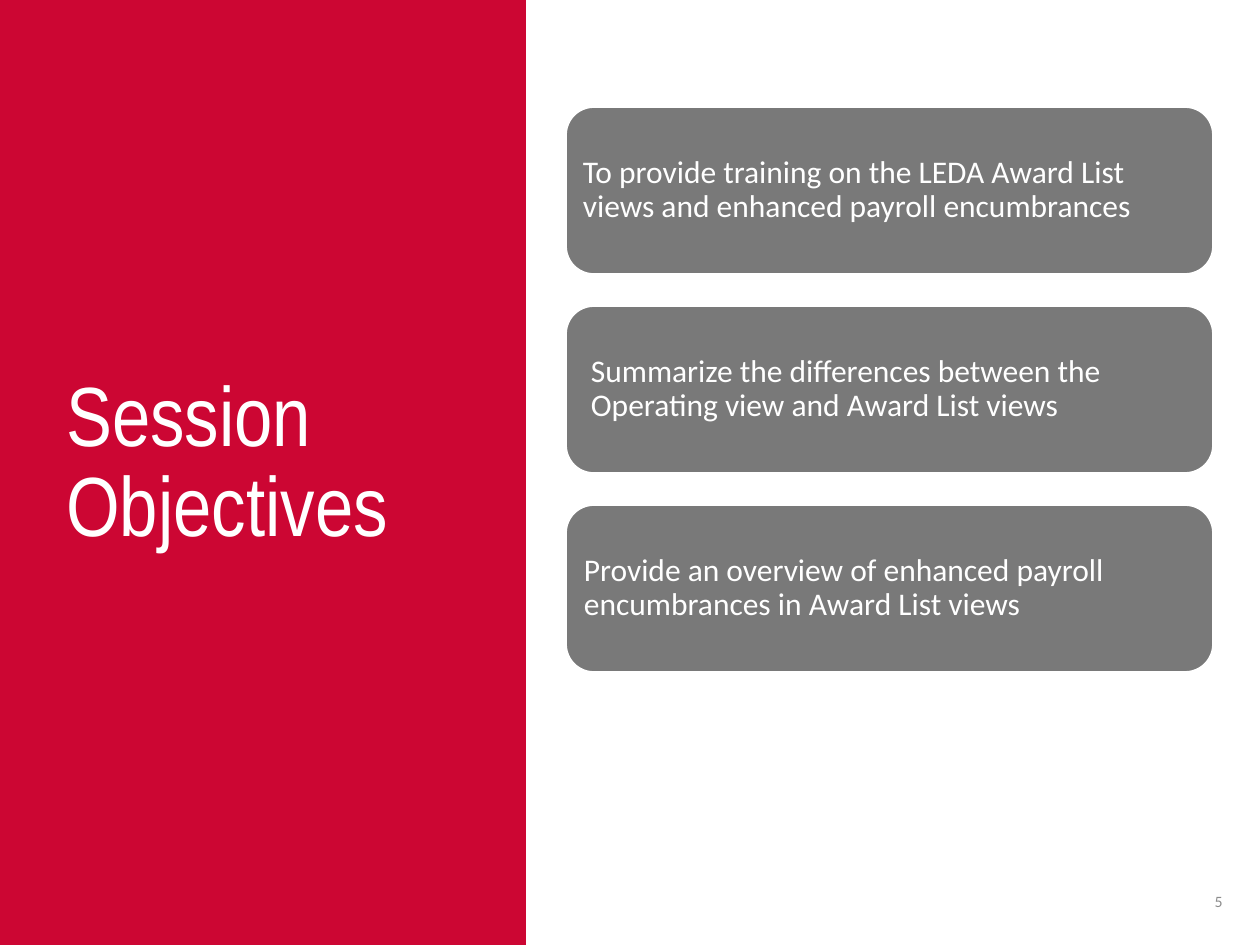
from pptx import Presentation
from pptx.dml.color import RGBColor
from pptx.enum.shapes import MSO_SHAPE
from pptx.enum.text import MSO_ANCHOR, PP_ALIGN
from pptx.util import Pt

RECT = MSO_SHAPE.RECTANGLE
ROUND = MSO_SHAPE.ROUNDED_RECTANGLE
MIDDLE = MSO_ANCHOR.MIDDLE
LEFT = PP_ALIGN.LEFT
RIGHT = PP_ALIGN.RIGHT
RED = RGBColor(0xCC, 0x06, 0x33)
GRAY = RGBColor(0x79, 0x79, 0x79)
PALE = RGBColor(0x8C, 0x8C, 0x8C)
WHITE = RGBColor(0xFF, 0xFF, 0xFF)
SCALE = 914400 / 126


def px(*vals):
    return [round(v * SCALE) for v in vals]


def add_text(box, text, size, font, color, align=LEFT, lead=0.9, pad=None):
    label = slide.shapes.add_textbox(*px(*box))
    frame = label.text_frame
    frame.word_wrap = True
    frame.vertical_anchor = MIDDLE
    if pad:
        inset = px(pad)[0]
        frame.margin_left = frame.margin_right = inset
        frame.margin_top = frame.margin_bottom = inset
    para = frame.paragraphs[0]
    para.text = text
    para.alignment = align
    para.line_spacing = lead
    para.font.size = Pt(size)
    para.font.name = font
    para.font.color.rgb = color


deck = Presentation()
deck.slide_width, deck.slide_height = px(1260, 945)
slide = deck.slides.add_slide(deck.slide_layouts[6])

panel = slide.shapes.add_shape(RECT, *px(0, 0, 526, 945))
panel.shadow.inherit = False
panel.fill.solid()
panel.fill.fore_color.rgb = RED
panel.line.fill.background()

add_text((54, 85, 393, 759), "Session Objectives", 48, "Arial Narrow", WHITE)

goals = [
    (566, 574, "To provide training on the LEDA Award List views and enhanced payroll encumbrances"),
    (566, 582, "Summarize the differences between the Operating view and Award List views"),
    (566, 575, "Provide an overview of enhanced payroll encumbrances in Award List views"),
]
for row, (left, inner, goal) in enumerate(goals):
    top = 107 + 199 * row
    card = slide.shapes.add_shape(ROUND, *px(left, top, 647, 167))
    card.shadow.inherit = False
    card.fill.solid()
    card.fill.fore_color.rgb = GRAY
    card.line.color.rgb = WHITE
    card.line.width = Pt(1)
    add_text((inner, top + 8, 631, 151), goal, 18, "Calibri", WHITE, pad=9)

add_text((1191, 876, 44, 50), "5", 9, "Calibri", PALE, align=RIGHT, lead=1.0)

deck.save("out.pptx")
